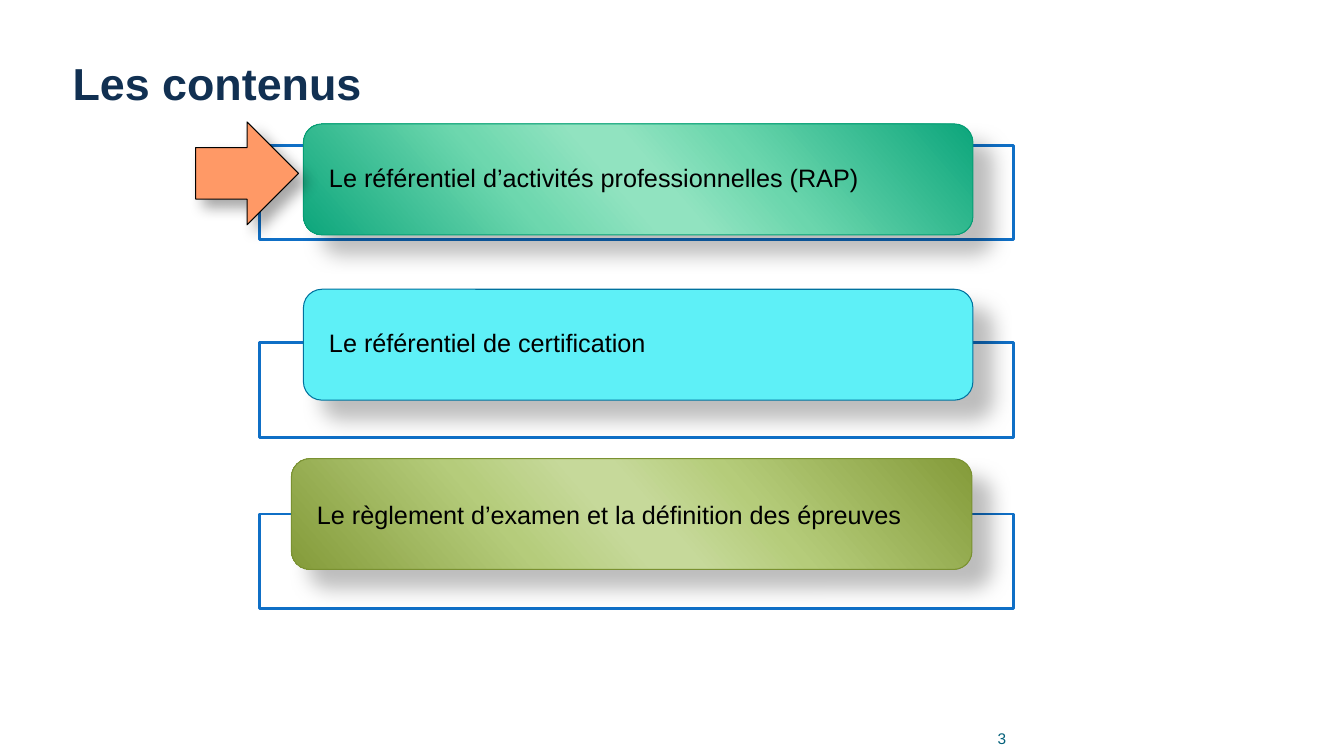
from lxml.etree import SubElement
from pptx import Presentation
from pptx.dml.color import RGBColor
from pptx.enum.shapes import MSO_SHAPE
from pptx.enum.text import MSO_ANCHOR, PP_ALIGN
from pptx.oxml.ns import qn
from pptx.util import Inches, Pt


def paint(tone):
    """Turn a hex string into a colour."""
    return RGBColor.from_string(tone)


def tint(node, tone, alpha=None):
    """Add a colour element, with an opacity in percent if given."""
    color = SubElement(node, qn("a:srgbClr"), val=tone)
    if alpha is not None:
        SubElement(color, qn("a:alpha"), val=str(alpha * 1000))


class Deck:
    """Holds the style and the current slide."""

    font = "Arial"
    black = "000000"
    blue = "0F6FC6"

    def __init__(self):
        """Open a wide deck with one title-only slide."""
        self.show = Presentation()
        self.show.slide_width = Inches(13.33)
        self.show.slide_height = Inches(7.5)
        self.slide = self.show.slides.add_slide(self.show.slide_layouts[5])

    def letter(self, shape, text, size, tone, anchor, pads, align=PP_ALIGN.LEFT, bold=False, space=1.0):
        """Set one styled paragraph in a shape."""
        frame = shape.text_frame
        frame.word_wrap = True
        frame.vertical_anchor = anchor
        frame.margin_left, frame.margin_top, frame.margin_right, frame.margin_bottom = map(Inches, pads)
        frame.text = text
        para = frame.paragraphs[0]
        para.alignment = align
        para.line_spacing = space
        para.font.name = self.font
        para.font.size = Pt(size)
        para.font.bold = bold
        para.font.color.rgb = paint(tone)

    def title(self, text, *box):
        """Place and fill the title."""
        shape = self.slide.shapes.title
        shape.left, shape.top, shape.width, shape.height = map(Inches, box)
        self.letter(shape, text, 32, "113052", MSO_ANCHOR.BOTTOM, (0.05, 0, 0.05, 0.51), bold=True)

    def label(self, text, *box):
        """Add a small right-aligned text box."""
        shape = self.slide.shapes.add_textbox(*map(Inches, box))
        self.letter(shape, text, 11, "04617B", MSO_ANCHOR.BOTTOM, (0, 0, 0, 0), PP_ALIGN.RIGHT)

    def shape(self, kind, box, fill, edge, width=0.75):
        """Add a filled and outlined shape without shadow."""
        item = self.slide.shapes.add_shape(kind, *map(Inches, box))
        item.shadow.inherit = False
        item.fill.solid()
        item.fill.fore_color.rgb = paint(fill)
        item.line.color.rgb = paint(edge)
        item.line.width = Pt(width)
        return item

    def shade(self, item, alpha, blur, dist):
        """Cast a shadow to the lower right."""
        effects = item.element.spPr.find(qn("a:effectLst"))
        outer = SubElement(effects, qn("a:outerShdw"), blurRad=str(Pt(blur)), dist=str(Pt(dist)),
                           dir="2700000", algn="tl", rotWithShape="0")
        tint(outer, self.black, alpha)

    def blend(self, item, stops):
        """Fill a shape with a slanted gradient."""
        item.fill.gradient()
        item.fill.gradient_angle = 221
        marks = item.element.spPr.find(qn("a:gradFill")).find(qn("a:gsLst"))
        for mark in list(marks):
            marks.remove(mark)
        for spot, tone in zip((0, 33, 47, 53, 68, 100), stops):
            tint(SubElement(marks, qn("a:gs"), pos=str(spot * 1000)), tone)

    def frame(self, top):
        """Add the outlined box behind a card."""
        self.shape(MSO_SHAPE.RECTANGLE, (2.57, top, 7.48, 0.94), "FFFFFF", self.blue, 2)

    def card(self, text, left, top, width, tones, edge, space):
        """Add a rounded card with its text."""
        item = self.shape(MSO_SHAPE.ROUNDED_RECTANGLE, (left, top, width, 1.1), tones[0], edge)
        if len(tones) > 1:
            self.blend(item, tones)
        self.shade(item, 26, 15, 18)
        self.letter(item, text, 18, self.black, MSO_ANCHOR.MIDDLE, (0.2, 0, 0.2, 0), space=space)

    def arrow(self, *box):
        """Add the arrow that marks the current part."""
        item = self.shape(MSO_SHAPE.RIGHT_ARROW, box, "FF9966", self.black)
        self.shade(item, 35, 10.2, 8)


def main():
    """Build and save the slide."""
    deck = Deck()
    deck.title("Les contenus", 0.67, 0.35, 10.56, 1.25)
    deck.label("3", 9.12, 7.17, 0.86, 0.25)
    green = ("0DA67C", "6BD6AD", "91E3C0", "91E3C0", "6DD7AE", "0DA67C")
    olive = ("849B3A", "B5CC7A", "C6D99A", "C6D99A", "B5CC7B", "849B3A")
    parts = (
        (1.44, "Le référentiel d’activités professionnelles (RAP)", 3.01, 1.23, 6.64, green, "059D74", 0.9),
        (3.4, "Le référentiel de certification", 3.01, 2.87, 6.64, ("5EF0F7",), "00729E", 0.9),
        (5.1, "Le règlement d’examen et la définition des épreuves", 2.89, 4.55, 6.75, olive, "7A9131", 1.0),
    )
    for top, *card in parts:
        deck.frame(top)
        deck.card(*card)
    deck.arrow(1.94, 1.21, 1.02, 1.02)
    deck.show.save("out.pptx")


if __name__ == "__main__":
    main()
